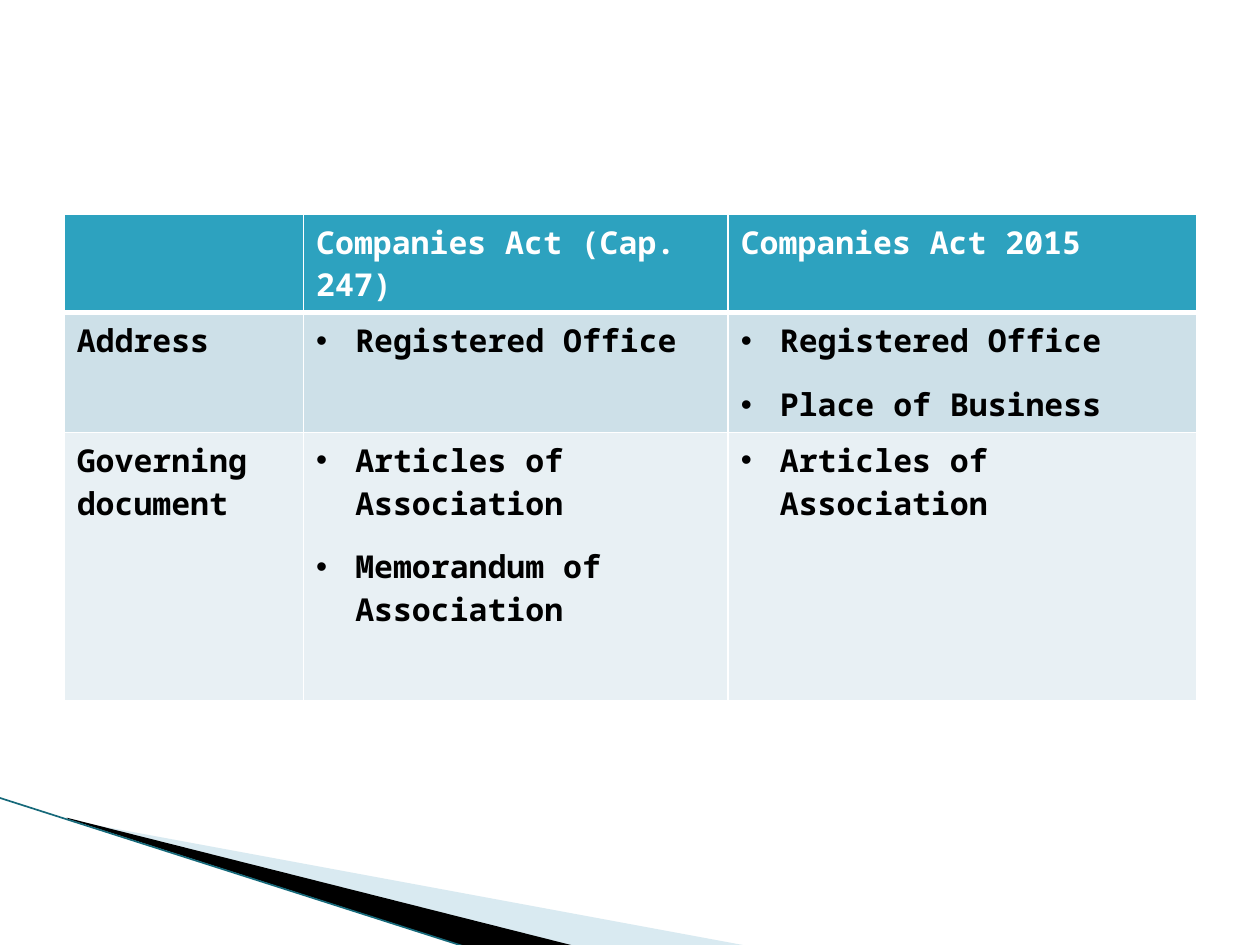
from lxml import etree
from pptx import Presentation
from pptx import util as u
from pptx.dml.color import RGBColor
from pptx.enum import shapes, text
from pptx.oxml.ns import qn


def color(value):
    return RGBColor.from_string(value)


class SlideBuilder:
    font_format = {"name": "Noto Sans Mono", "size": u.Pt(18), "bold": True}
    header_fill = "2DA2BF"
    band_fills = ("CDE0E8", "E8F0F4")
    border_color = "FFFFFF"
    indent = u.Inches(0.31)

    def __init__(self, slide):
        self.slide = slide

    def polygon(self, points, fill, opacity=None):
        corners = [(u.Inches(x), u.Inches(y)) for x, y in points]
        builder = self.slide.shapes.build_freeform(*corners[0], scale=1.0)
        builder.add_line_segments(corners[1:], close=True)
        shape = builder.convert_to_shape()
        shape.shadow.inherit = False
        shape.fill.solid()
        shape.fill.fore_color.rgb = color(fill)
        shape.line.fill.background()
        if opacity is not None:
            solid = shape.fill._xPr.find(qn("a:solidFill"))
            etree.SubElement(solid[0], qn("a:alpha"), val=str(opacity * 1000))

    def line(self, start, end, line_color, width):
        ends = [u.Inches(value) for value in (*start, *end)]
        connector = self.slide.shapes.add_connector(
            shapes.MSO_CONNECTOR.STRAIGHT, *ends)
        connector.line.color.rgb = color(line_color)
        connector.line.width = u.Pt(width)
        etree.SubElement(connector._element.spPr, qn("a:effectLst"))

    def borders(self, cell, bottom=1, top=1):
        properties = cell._tc.get_or_add_tcPr()
        for side, width in {"L": 1, "R": 1, "T": top, "B": bottom}.items():
            border = etree.SubElement(properties, qn(f"a:ln{side}"),
                                      w=str(u.Pt(width)))
            solid = etree.SubElement(border, qn("a:solidFill"))
            etree.SubElement(solid, qn("a:srgbClr"), val=self.border_color)

    def paragraph(self, paragraph, wording, font_color, bullet):
        if bullet:
            properties = paragraph._p.get_or_add_pPr()
            properties.set("marL", str(self.indent))
            properties.set("indent", str(-self.indent))
            etree.SubElement(properties, qn("a:buFont"), typeface="Arial")
            etree.SubElement(properties, qn("a:buChar"), char="•")
        run = paragraph.add_run()
        run.text = wording
        for name, value in self.font_format.items():
            setattr(run.font, name, value)
        run.font.color.rgb = color(font_color)

    def cell(self, cell, lines, fill, font_color, bullet):
        cell.fill.solid()
        cell.fill.fore_color.rgb = color(fill)
        cell.vertical_anchor = text.MSO_ANCHOR.TOP
        frame = cell.text_frame
        for index, wording in enumerate(lines):
            paragraph = frame.add_paragraph() if index else frame.paragraphs[0]
            if index:
                paragraph.space_before = u.Pt(12)
            self.paragraph(paragraph, wording, font_color, bullet)

    def table(self, left, top, widths, heights, rows):
        frame = self.slide.shapes.add_table(
            len(rows), len(widths), u.Inches(left), u.Inches(top),
            u.Inches(sum(widths)), u.Inches(sum(heights)))
        table = frame.table
        for column, width in zip(table.columns, widths):
            column.width = u.Inches(width)
        for row, height in zip(table.rows, heights):
            row.height = u.Inches(height)
        for r, row in enumerate(rows):
            header = r == 0
            fill = self.header_fill if header else self.band_fills[(r - 1) % 2]
            for c, lines in enumerate(row):
                cell = table.cell(r, c)
                self.borders(cell, bottom=3 if header else 1,
                             top=3 if r == 1 else 1)
                self.cell(cell, lines, fill, "FFFFFF" if header else "000000",
                          bullet=not header and c > 0)


def main():
    presentation = Presentation()
    presentation.slide_width = u.Inches(10)
    presentation.slide_height = u.Inches(7.5)
    slide = presentation.slides.add_slide(presentation.slide_layouts[6])
    builder = SlideBuilder(slide)

    # Corner decoration
    builder.polygon([(0.55, 6.51), (5.95, 7.51), (4.56, 7.51), (0.55, 6.5)],
                    "A0CBDC", opacity=40)
    builder.polygon([(0.53, 6.49), (4.57, 7.51), (3.72, 7.52), (0.54, 6.5)],
                    "000000")
    builder.line((-0.01, 6.33), (3.71, 7.52), "16697A", 0.95)

    # Comparison of the two acts
    builder.table(0.51, 1.7, (1.9, 3.37, 3.72), (0.77, 0.95, 2.13), [
        [[], ["Companies Act (Cap. 247)"], ["Companies Act 2015"]],
        [["Address"], ["Registered Office"],
         ["Registered Office", "Place of Business"]],
        [["Governing document"],
         ["Articles of Association", "Memorandum of Association"],
         ["Articles of Association"]],
    ])

    presentation.save("out.pptx")


if __name__ == "__main__":
    main()
